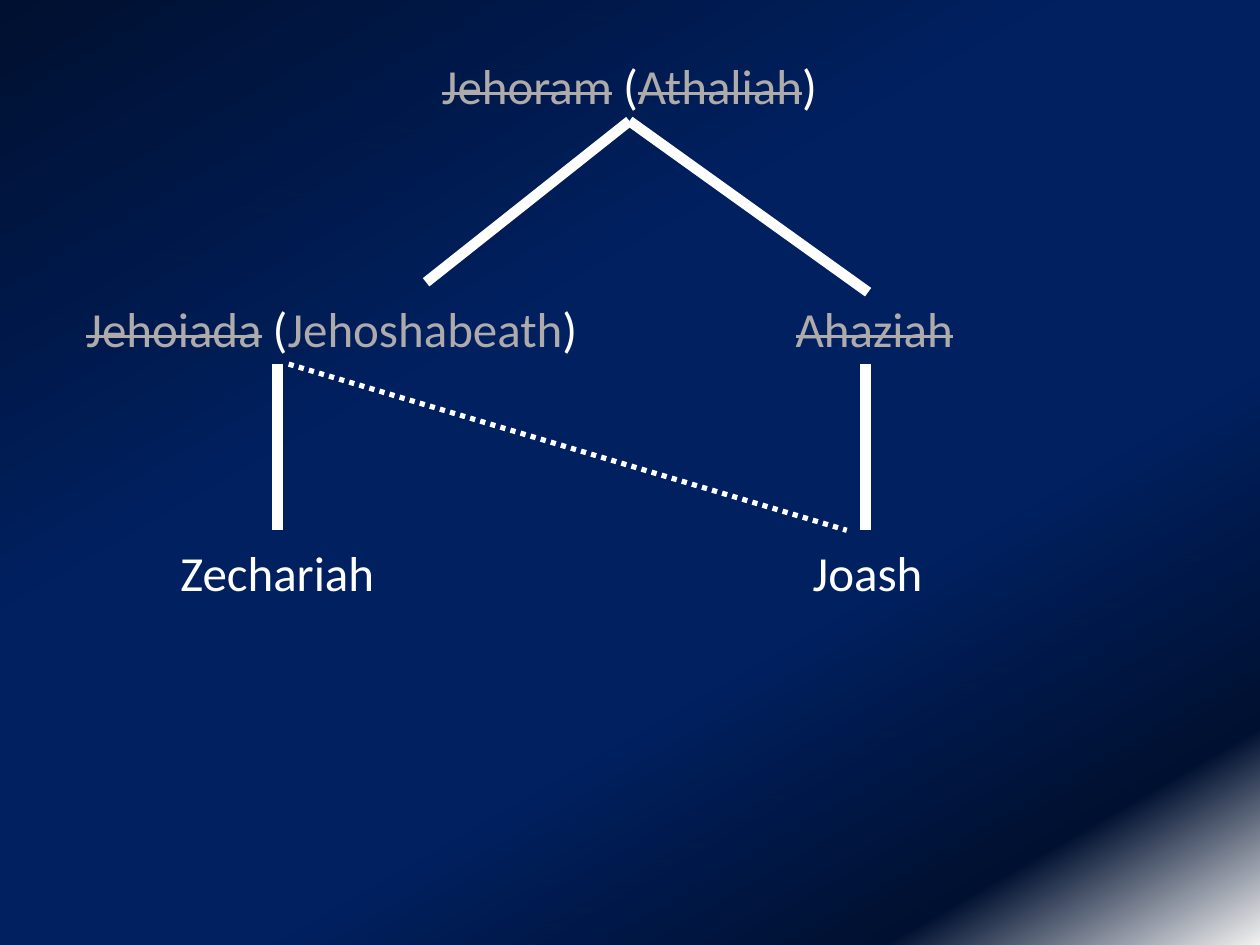
from lxml import etree
from pptx import Presentation
from pptx.dml.color import RGBColor
from pptx.enum.dml import MSO_LINE
from pptx.enum.shapes import MSO_CONNECTOR
from pptx.enum.text import MSO_AUTO_SIZE, PP_ALIGN
from pptx.oxml.ns import qn
from pptx.util import Cm, Pt

WHITE = RGBColor(0xFF, 0xFF, 0xFF)
GREY = RGBColor(0xAF, 0xAB, 0xAB)
NIGHT = RGBColor(0x00, 0x10, 0x30)
NAVY = RGBColor(0x00, 0x20, 0x60)
PALE = RGBColor(0xF2, 0xF2, 0xF2)

STRAIGHT = MSO_CONNECTOR.STRAIGHT
DOTTED = MSO_LINE.ROUND_DOT  # written as sysDot
CENTER = PP_ALIGN.CENTER
GROW = MSO_AUTO_SIZE.SHAPE_TO_FIT_TEXT
BLANK_LAYOUT = 6
BOTTOM = 2

# Rows of the tree, in cm
NAME_HEIGHT = 1.45
ROW_1, ROW_2, ROW_3 = 0.99, 5.89, 10.82
CHILD_LINE_TOP, CHILD_LINE_END = 7.34, 10.69
LEFT_LINE_X, RIGHT_LINE_X = 5.59, 17.45


class FamilyTree:
    font, size = "Calibri", Pt(28)

    def __init__(self, slide):
        self.s = slide

    def background(self, stops, angle):
        """Fill the slide with a gradient of (percent, colour) stops."""
        self.s.background.fill.gradient()
        grad = self.s._element.find(".//" + qn("a:gradFill"))
        stop_list = grad.find(qn("a:gsLst"))
        for old in list(stop_list):
            stop_list.remove(old)
        for percent, color in stops:
            gs = etree.SubElement(stop_list, qn("a:gs"), pos=str(percent * 1000))
            etree.SubElement(gs, qn("a:srgbClr"), val=str(color))
        grad.find(qn("a:lin")).set("ang", str(angle * 60000))

    def person(self, left, top, width, *runs):
        """Add a name box; each run is (text, colour, struck)."""
        sp = self.s.shapes.add_textbox(Cm(left), Cm(top), Cm(width), Cm(NAME_HEIGHT))
        tf = sp.text_frame
        tf.word_wrap = True
        tf.auto_size = GROW
        p = tf.paragraphs[0]
        p.alignment = CENTER
        for text, color, struck in runs:
            r = p.add_run()
            r.text = text
            r.font.name, r.font.size = self.font, self.size
            r.font.color.rgb = color
            if struck:
                r._r.get_or_add_rPr().set("strike", "sngStrike")
        return sp

    def line(self, x1, y1, x2, y2, width=6, dash=None, parent=None):
        ln = self.s.shapes.add_connector(STRAIGHT, Cm(x1), Cm(y1), Cm(x2), Cm(y2))
        ln.line.color.rgb = WHITE
        ln.line.width = Pt(width)
        if dash:
            ln.line.dash_style = dash
        etree.SubElement(ln._element.spPr, qn("a:effectLst"))
        if parent is not None:
            ln.begin_connect(parent, BOTTOM)


def main():
    prs = Presentation()
    prs.slide_width, prs.slide_height = Cm(25.4), Cm(19.05)
    tree = FamilyTree(prs.slides.add_slide(prs.slide_layouts[BLANK_LAYOUT]))
    tree.background([(0, NIGHT), (38, NAVY), (65, NAVY), (87, NIGHT), (100, PALE)], 60)

    jehoram = tree.person(8.59, ROW_1, 8.2, ("Jehoram", GREY, True), (" (", WHITE, False),
                          ("Athaliah", GREY, True), (")", WHITE, False))
    tree.person(15.44, ROW_2, 4.37, ("Ahaziah", GREY, True))
    tree.person(1.04, ROW_2, 11.3, ("Jehoiada", GREY, True), (" (", WHITE, False),
                ("Jehoshabeath", GREY, False), (")", WHITE, False))
    tree.person(15.98, ROW_3, 3.02, ("Joash", WHITE, False))
    tree.person(3.38, ROW_3, 4.42, ("Zechariah", WHITE, False))

    for x, y in ((8.59, 5.69), (17.5, 5.89)):
        tree.line(12.7, 2.44, x, y, parent=jehoram)
    for x in (LEFT_LINE_X, RIGHT_LINE_X):
        tree.line(x, CHILD_LINE_TOP, x, CHILD_LINE_END)
    tree.line(5.82, CHILD_LINE_TOP, 17.07, CHILD_LINE_END, width=3, dash=DOTTED)

    prs.save("out.pptx")


if __name__ == "__main__":
    main()
